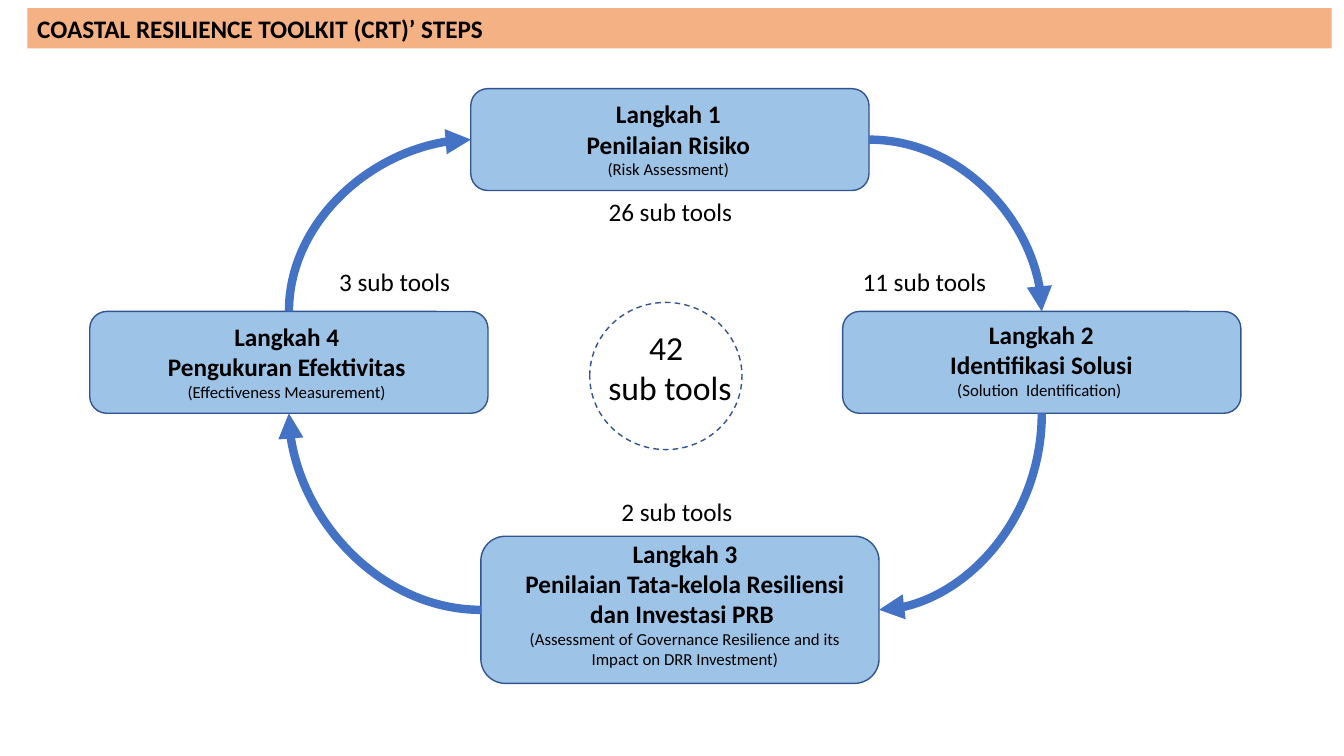
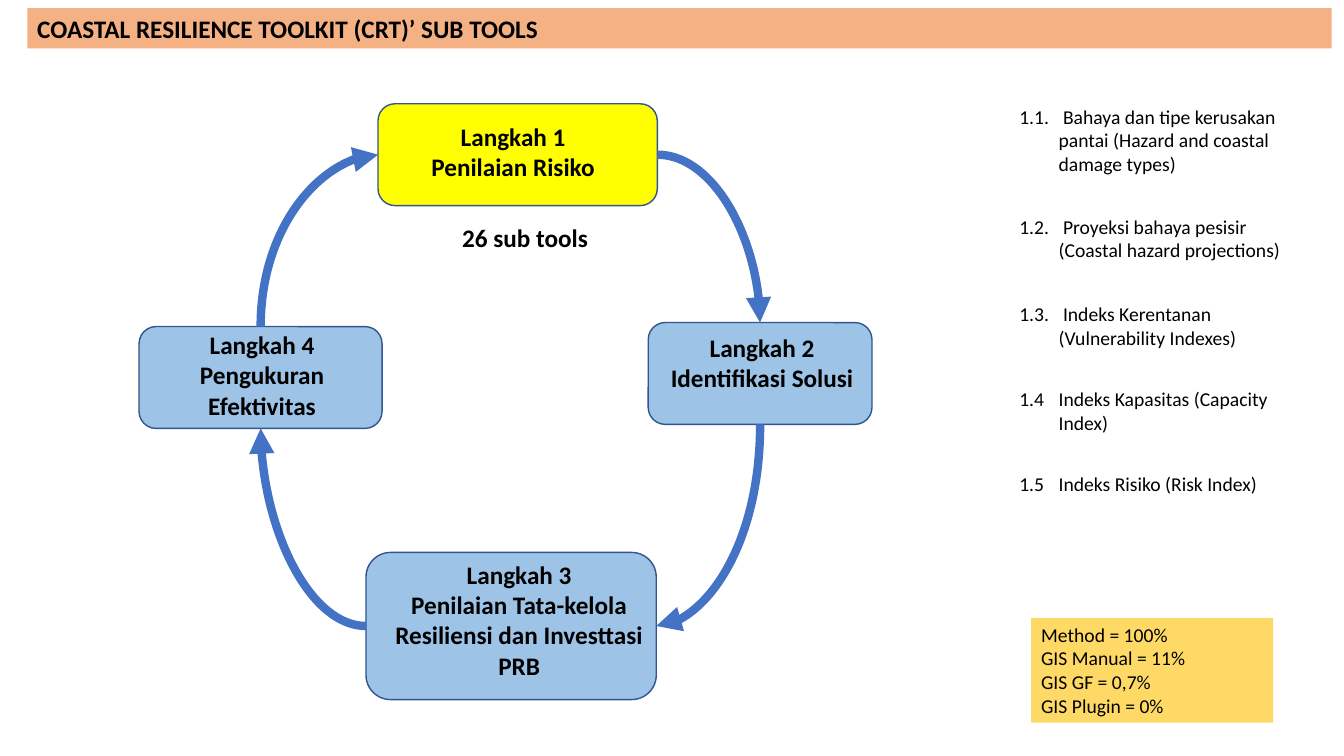
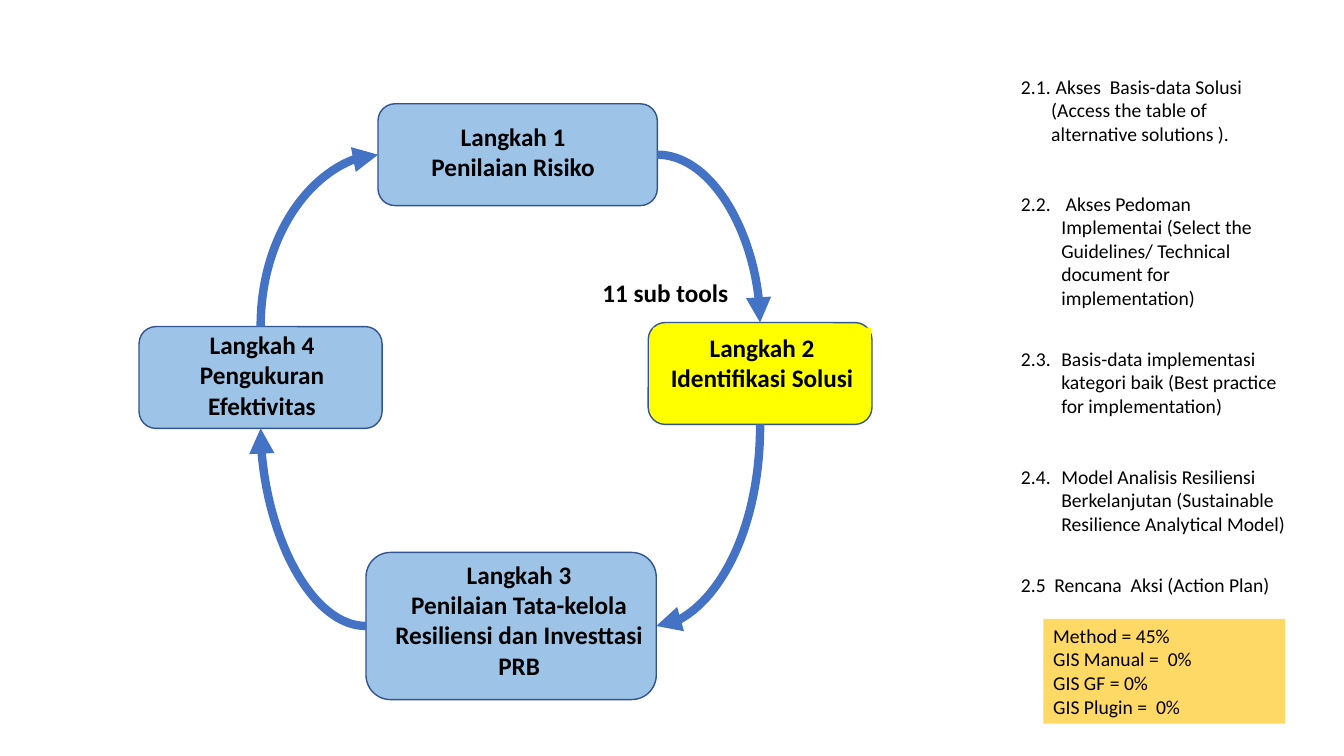
from lxml.etree import SubElement
from pptx import Presentation
from pptx.dml.color import RGBColor
from pptx.enum.dml import MSO_LINE_DASH_STYLE as Dash
from pptx.enum.shapes import MSO_CONNECTOR as Link, MSO_SHAPE as Form
from pptx.enum.text import MSO_AUTO_SIZE as Fit, PP_ALIGN as Align
from pptx.oxml.ns import qn
from pptx.util import Inches, Pt

COLORS = {
    "band": "F4B183",
    "step": "9DC3E6",
    "active": "FFFF00",
    "note": "FFD966",
    "outline": "325491",
    "arrow": "4472C4",
    "text": "000000",
}
FONT = "Calibri"
TITLE_AREA = (2.03, 1.07, 97.05, 5.33)
STEP_HEIGHT, TALL_HEIGHT, LABEL_HEIGHT = 13.47, 19.47, 5.33
ITEM_WIDTH, ITEM_PADDING, ITEM_LINE = 21.3, 1.4, 3.13

deck = Presentation()
deck.slide_width, deck.slide_height = Inches(13.33), Inches(7.5)
column, row = deck.slide_width / 100, deck.slide_height / 100


def outline(page, form, area, fill=None):
    left, top, width, height = area
    shape = page.shapes.add_shape(
        form, int(left * column), int(top * row), int(width * column), int(height * row))
    shape.shadow.inherit = False
    if fill:
        shape.fill.solid()
        shape.fill.fore_color.rgb = RGBColor.from_string(COLORS[fill])
    else:
        shape.fill.background()
    shape.line.color.rgb = RGBColor.from_string(COLORS["outline"])
    shape.line.width = Pt(1)
    return shape


def write(page, area, lines, size=18, bold=False, align=Align.LEFT, fill=None, indent=0, wrap=True):
    left, top, width, height = area
    box = page.shapes.add_textbox(
        int(left * column), int(top * row), int(width * column), int(height * row))
    if fill:
        box.fill.solid()
        box.fill.fore_color.rgb = RGBColor.from_string(COLORS[fill])
    frame = box.text_frame
    frame.word_wrap = wrap
    frame.auto_size = Fit.SHAPE_TO_FIT_TEXT
    frame.text = "\n".join(lines)
    for para in frame.paragraphs:
        para.alignment = align
        if indent:
            margins = para._p.get_or_add_pPr()
            margins.set("marL", str(Inches(indent)))
            margins.set("indent", str(-Inches(indent)))
        for span in para.runs:
            span.font.name = FONT
            span.font.size = Pt(size)
            span.font.bold = bold
            span.font.color.rgb = RGBColor.from_string(COLORS["text"])
    return box


wide_steps = [
    (35.03, 11.73, 29.63, STEP_HEIGHT),
    (62.7, 41.2, 29.63, STEP_HEIGHT),
    (35.78, 70.93, 29.63, TALL_HEIGHT),
    (6.68, 41.2, 29.63, STEP_HEIGHT),
]
wide_texts = [
    ((41.1, 12.4, 17.25, 12.13), ["Langkah 1", "Penilaian Risiko", "(Risk Assessment)"]),
    ((67.43, 41.6, 20.1, 12.13),
     ["Langkah 2", "Identifikasi Solusi", "(Solution  Identification) "]),
    ((37.28, 70.53, 27.38, 18.8),
     ["Langkah 3", "Penilaian Tata-kelola Resiliensi dan Investasi PRB ",
      "(Assessment of Governance Resilience and its Impact on DRR Investment)"]),
    ((7.65, 41.87, 27.38, 12.13),
     ["Langkah 4", "Pengukuran Efektivitas", "(Effectiveness Measurement)"]),
]
narrow_steps = [
    (28.13, 13.73, 20.78, STEP_HEIGHT),
    (48.23, 42.67, 16.65, STEP_HEIGHT),
    (27.23, 73.07, 21.6, TALL_HEIGHT),
    (10.35, 43.2, 18.08, STEP_HEIGHT),
]
narrow_texts = [
    ((29.55, 15.33, 17.25, 9.47), ["Langkah 1", "Penilaian Risiko"]),
    ((48.6, 43.33, 16.2, 9.47), ["Langkah 2", "Identifikasi Solusi"]),
    ((27.75, 73.33, 21.75, 17.47),
     ["Langkah 3", "Penilaian Tata-kelola Resiliensi dan Investtasi PRB"]),
    ((10.5, 42.93, 18, 13.47), ["Langkah 4", "Pengukuran Efektivitas"]),
]

slides = [
    {
        "title": "COASTAL RESILIENCE TOOLKIT (CRT)’ STEPS",
        "steps": wide_steps, "texts": wide_texts, "active": None,
        "labels": [
            (44.48, 25.33, 10.8, "26 sub tools"),
            (63.38, 34.53, 10.8, "11 sub tools"),
            (45.45, 64.93, 9.83, "2 sub tools"),
            (24.45, 34.53, 9.83, "3 sub tools"),
        ],
    },
    {
        "title": "COASTAL RESILIENCE TOOLKIT (CRT)’ SUB TOOLS",
        "steps": narrow_steps, "texts": narrow_texts, "active": 0,
        "labels": [(33.6, 28.8, 10.95, "26 sub tools")],
        "item_left": 75.1,
        "items": [
            (13.2, 3, 0.39, "1.1.\t Bahaya dan tipe kerusakan pantai (Hazard and coastal damage types)"),
            (27.73, 2, 0.39, "1.2.\t Proyeksi bahaya pesisir (Coastal hazard projections)"),
            (39.33, 2, 0.39, "1.3.\t Indeks Kerentanan (Vulnerability Indexes)"),
            (50.53, 2, 0.39, "1.4\tIndeks Kapasitas (Capacity Index)"),
            (61.73, 1, 0.39, "1.5\tIndeks Risiko (Risk Index)"),
        ],
        "note_area": (76.73, 81.73, 18, 13.87),
        "note": ["Method = 100%", "GIS Manual = 11%", "GIS GF = 0,7%", "GIS Plugin = 0%"],
    },
    {
        "title": None,
        "steps": narrow_steps, "texts": narrow_texts, "active": 1,
        "labels": [(44.03, 36, 10.95, "11 sub tools")],
        "item_left": 75.23,
        "items": [
            (9.2, 3, 0.3, "2.1.\t Akses  Basis-data Solusi (Access the table of alternative solutions )."),
            (24.67, 5, 0.4, "2.2.\t Akses Pedoman Implementai (Select the Guidelines/ Technical "
                            "document for implementation)"),
            (45.2, 3, 0.4, "2.3.\tBasis-data implementasi kategori baik (Best practice for implementation)"),
            (60.8, 3, 0.4, "2.4.\tModel Analisis Resiliensi Berkelanjutan (Sustainable Resilience "
                           "Analytical Model)"),
            (75.07, 1, 0.33, "2.5\tRencana  Aksi (Action Plan)"),
        ],
        "note_area": (77.63, 81.87, 18, 13.87),
        "note": ["Method = 45%", "GIS Manual =  0%", "GIS GF = 0%", "GIS Plugin =  0%"],
    },
]

for content in slides:
    page = deck.slides.add_slide(deck.slide_layouts[6])
    active = content["active"]
    overview = active is None

    sides = []
    for number, area in enumerate(content["steps"]):
        step = outline(page, Form.ROUNDED_RECTANGLE, area, "active" if number == active else "step")
        center, middle = step.left + step.width // 2, step.top + step.height // 2
        sides.append({
            "top": (center, step.top), "bottom": (center, step.top + step.height),
            "left": (step.left, middle), "right": (step.left + step.width, middle),
        })

    first, second, third, fourth = sides
    arrows = [
        (first["right"], second["top"], 0, False),
        (second["bottom"], third["right"], 90, False),
        (third["left"], fourth["bottom"], 180, False),
        (fourth["top"], first["left"], 90, True),
    ]
    for (start_x, start_y), (end_x, end_y), angle, flipped in arrows:
        width, height = abs(end_x - start_x), abs(end_y - start_y)
        if angle == 90:
            width, height = height, width
        left = (start_x + end_x - width) // 2
        top = (start_y + end_y - height) // 2
        corners = [(left, top), (left + width, top + height)]
        if flipped:
            corners.reverse()
        arrow = page.shapes.add_connector(Link.CURVE, *corners[0], *corners[1])
        arrow.line.color.rgb = RGBColor.from_string(COLORS["arrow"])
        arrow.line.width = Pt(6)
        properties = arrow._element.spPr
        properties.find(qn("a:xfrm")).set("rot", str(angle * 60000))
        properties.find(qn("a:prstGeom")).set("prst", "curvedConnector2")
        SubElement(properties.find(qn("a:ln")), qn("a:tailEnd"), type="triangle")
        SubElement(properties, qn("a:effectLst"))

    for number, (area, lines) in enumerate(content["texts"]):
        fill = "active" if number == active == 1 else None
        box = write(page, area, lines, bold=True, align=Align.CENTER, fill=fill)
        if overview:
            for span in box.text_frame.paragraphs[-1].runs:
                span.font.size = Pt(12)
                span.font.bold = False

    for left, top, width, label in content["labels"]:
        write(page, (left, top, width, LABEL_HEIGHT), [label],
              bold=not overview, align=Align.CENTER, wrap=False)

    if content["title"]:
        write(page, TITLE_AREA, [content["title"]], bold=True, fill="band")

    if overview:
        write(page, (44.48, 42.53, 10.73, 12.13), ["42 ", "sub tools"],
              size=24, align=Align.CENTER, wrap=False)
        circle = outline(page, Form.OVAL, (43.88, 40, 11.33, TALL_HEIGHT))
        circle.line.dash_style = Dash.DASH
    else:
        for top, lines, indent, item in content["items"]:
            area = (content["item_left"], top, ITEM_WIDTH, ITEM_PADDING + ITEM_LINE * lines)
            write(page, area, [item], size=14, indent=indent)
        write(page, content["note_area"], content["note"], size=14, fill="note")

deck.save("out.pptx")
